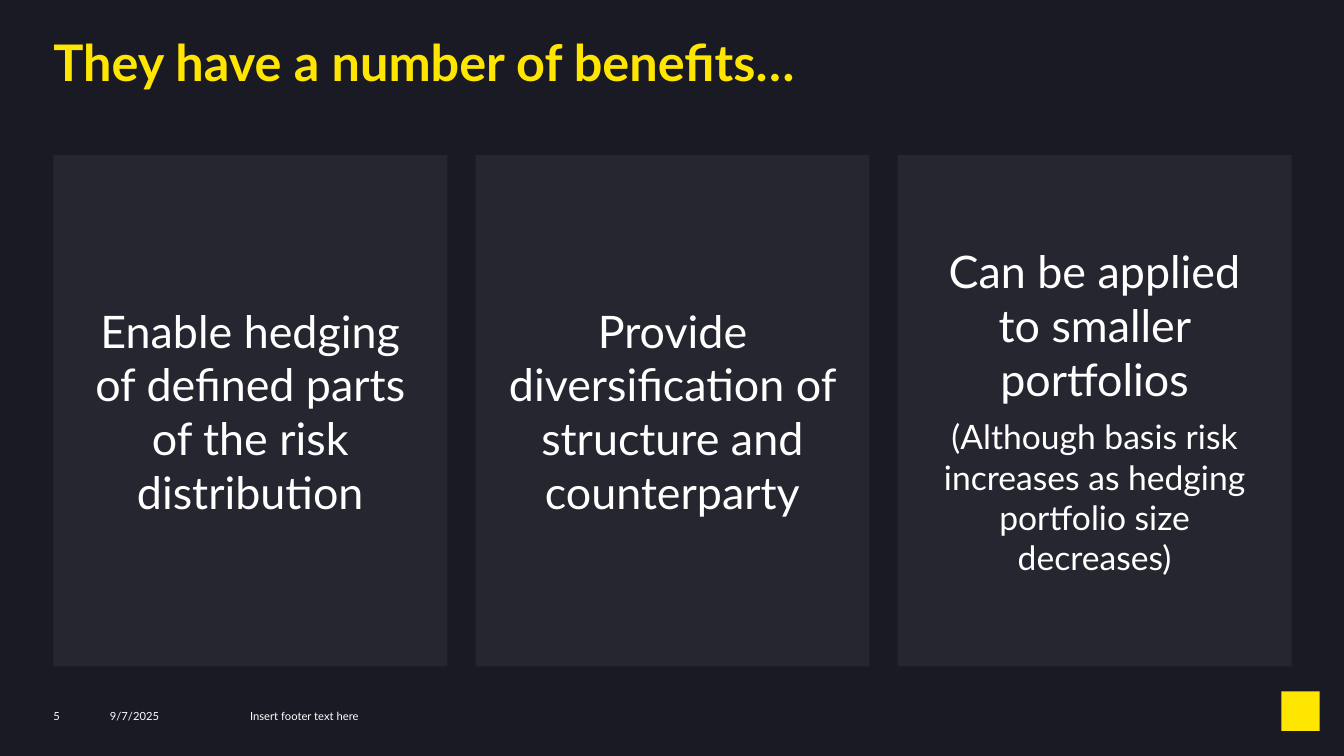
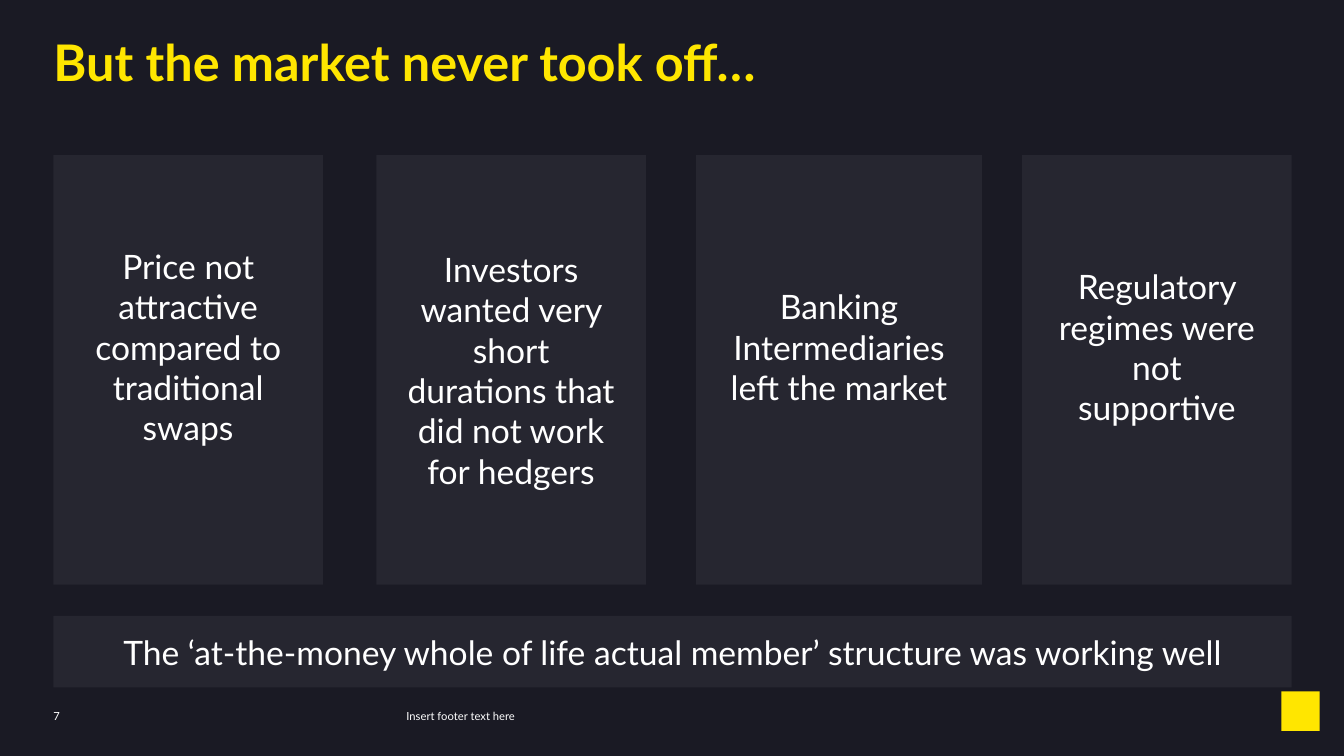
import pptx
import pptx.util
import pptx.dml.color
import pptx.enum.shapes
import pptx.enum.text
import pptx.oxml.ns
import lxml.etree

RGBColor = pptx.dml.color.RGBColor
Inches = pptx.util.Inches
Pt = pptx.util.Pt
ALIGN = pptx.enum.text.PP_ALIGN
ANCHOR = pptx.enum.text.MSO_ANCHOR
RECT = pptx.enum.shapes.MSO_SHAPE.RECTANGLE
qn = pptx.oxml.ns.qn

NIGHT = RGBColor(0x1A, 0x1A, 0x24)
PANEL = RGBColor(0x2E, 0x2E, 0x38)
YELLOW = RGBColor(0xFF, 0xE6, 0x00)
WHITE = RGBColor(0xFF, 0xFF, 0xFF)

FONT = "Lato"
WIDTH, HEIGHT = 13.33, 7.5
MARGIN = 0.53
CONTENT = 12.28
PANEL_TOP = 1.54
PAD_X, PAD_Y = 0.28, 0.2
RAISED = 0.66
COMPARISON = 4


def place(sp, left, top, width, height):
    """Set the position and size of a shape in inches."""
    sp.left, sp.top = Inches(left), Inches(top)
    sp.width, sp.height = Inches(width), Inches(height)


def columns(count, gap):
    """Return the left and width of equal columns across the content area."""
    width = (CONTENT - gap * (count - 1)) / count
    return [(MARGIN + i * (width + gap), width) for i in range(count)]


def set_frame(tf, anchor, left=0, top=0, right=0, bottom=0):
    """Set wrapping, anchor and insets of a text frame."""
    tf.word_wrap = True
    tf.auto_size = pptx.enum.text.MSO_AUTO_SIZE.NONE
    tf.vertical_anchor = anchor
    tf.margin_left, tf.margin_top = Inches(left), Inches(top)
    tf.margin_right, tf.margin_bottom = Inches(right), Inches(bottom)


def add_run(p, text, size, color=WHITE, bold=False):
    """Add one formatted run to a paragraph."""
    r = p.add_run()
    r.text = text
    r.font.name = FONT
    r.font.size = Pt(size)
    r.font.bold = bold
    r.font.color.rgb = color


def write_panel(sp, paragraphs, bottom=PAD_Y):
    """Fill a panel and write its centred, unbulleted paragraphs."""
    sp.fill.solid()
    sp.fill.fore_color.rgb = PANEL
    color = sp._element.spPr.find(".//" + qn("a:srgbClr"))
    lxml.etree.SubElement(color, qn("a:alpha")).set("val", "60000")
    sp.line.fill.background()
    tf = sp.text_frame
    set_frame(tf, ANCHOR.MIDDLE, PAD_X, PAD_Y, PAD_X, bottom)
    for i, (text, size) in enumerate(paragraphs):
        p = tf.add_paragraph() if i else tf.paragraphs[0]
        pPr = p._p.get_or_add_pPr()
        pPr.set("marL", "0")
        pPr.set("indent", "0")
        lxml.etree.SubElement(pPr, qn("a:buNone"))
        p.alignment = ALIGN.CENTER
        p.line_spacing = 1.0
        p.space_before = Pt(4 if i else 0)
        p.space_after = Pt(4)
        add_run(p, text, size)


def add_panels(s, grid, height, panels):
    """Use body placeholders as a row of panels and remove the spare ones."""
    bodies = [sp for sp in s.placeholders if sp.placeholder_format.idx]
    for sp, (left, width), (paragraphs, bottom) in zip(bodies, grid, panels):
        place(sp, left, PANEL_TOP, width, height)
        write_panel(sp, paragraphs, bottom)
    for sp in bodies[len(panels):]:
        sp._element.getparent().remove(sp._element)


def add_banner(s, top, height, text, size):
    """Add a full-width panel with one line of text."""
    sp = s.shapes.add_shape(RECT, 0, 0, 0, 0)
    sp.shadow.inherit = False
    place(sp, MARGIN, top, CONTENT, height)
    write_panel(sp, [(text, size)])


def add_footer_text(s, left, width, text, align=ALIGN.LEFT):
    """Add one small text box on the footer line."""
    sp = s.shapes.add_textbox(0, 0, 0, 0)
    place(sp, left, 7.04, width, 0.13)
    set_frame(sp.text_frame, ANCHOR.TOP)
    p = sp.text_frame.paragraphs[0]
    p.alignment = align
    add_run(p, text, 8)


def add_slide(prs, title, number, footer_align=ALIGN.LEFT):
    """Add a slide with its title, footer and corner mark."""
    s = prs.slides.add_slide(prs.slide_layouts[COMPARISON])
    sp = s.shapes.title
    place(sp, MARGIN, 0.4, CONTENT, 0.51)
    set_frame(sp.text_frame, ANCHOR.TOP)
    p = sp.text_frame.paragraphs[0]
    p.alignment = ALIGN.LEFT
    p.line_spacing = 0.85
    add_run(p, title, 36, YELLOW, True)
    mark = s.shapes.add_shape(RECT, 0, 0, 0, 0)
    place(mark, 12.71, 6.86, 0.38, 0.39)
    mark.shadow.inherit = False
    mark.fill.solid()
    mark.fill.fore_color.rgb = YELLOW
    mark.line.fill.background()
    add_footer_text(s, MARGIN, 0.56, number)
    add_footer_text(s, 2.48, 4.18, "Insert footer text here", footer_align)
    return s


def build_benefits(prs):
    """Build the slide on benefits."""
    s = add_slide(prs, "They have a number of benefits…", "5")
    add_footer_text(s, 1.09, 1.4, "9/7/2025")
    add_panels(s, columns(3, PAD_X), 5.07, [
        ([("Enable hedging of defined parts of the risk distribution", 32)], PAD_Y),
        ([("Provide diversification of structure and counterparty", 32)], PAD_Y),
        ([("Can be applied to smaller portfolios", 32),
          ("(Although basis risk increases as hedging portfolio size decreases)", 24)],
         PAD_Y),
    ])


def build_market(prs):
    """Build the slide on why the market stalled."""
    s = add_slide(prs, "But the market never took off…", "7", ALIGN.CENTER)
    grid = columns(4, 0.53)
    left, width = grid[2]
    grid[2] = (left - 0.03, width + 0.16)
    add_panels(s, grid, 4.26, [
        ([("Price not attractive compared to traditional swaps", 24)], RAISED),
        ([("Investors wanted very short durations that did not work for hedgers", 24)],
         PAD_Y),
        ([("Banking Intermediaries left the market", 24)], RAISED),
        ([("Regulatory regimes were not supportive", 24)], RAISED),
    ])
    add_banner(s, 6.11, 0.71, "The ‘at-the-money whole of life actual member’ "
               "structure was working well", 24)


def main():
    """Build and save the presentation."""
    prs = pptx.Presentation()
    prs.slide_width, prs.slide_height = Inches(WIDTH), Inches(HEIGHT)
    fill = prs.slide_master.background.fill
    fill.solid()
    fill.fore_color.rgb = NIGHT
    build_benefits(prs)
    build_market(prs)
    prs.save("out.pptx")


if __name__ == "__main__":
    main()
